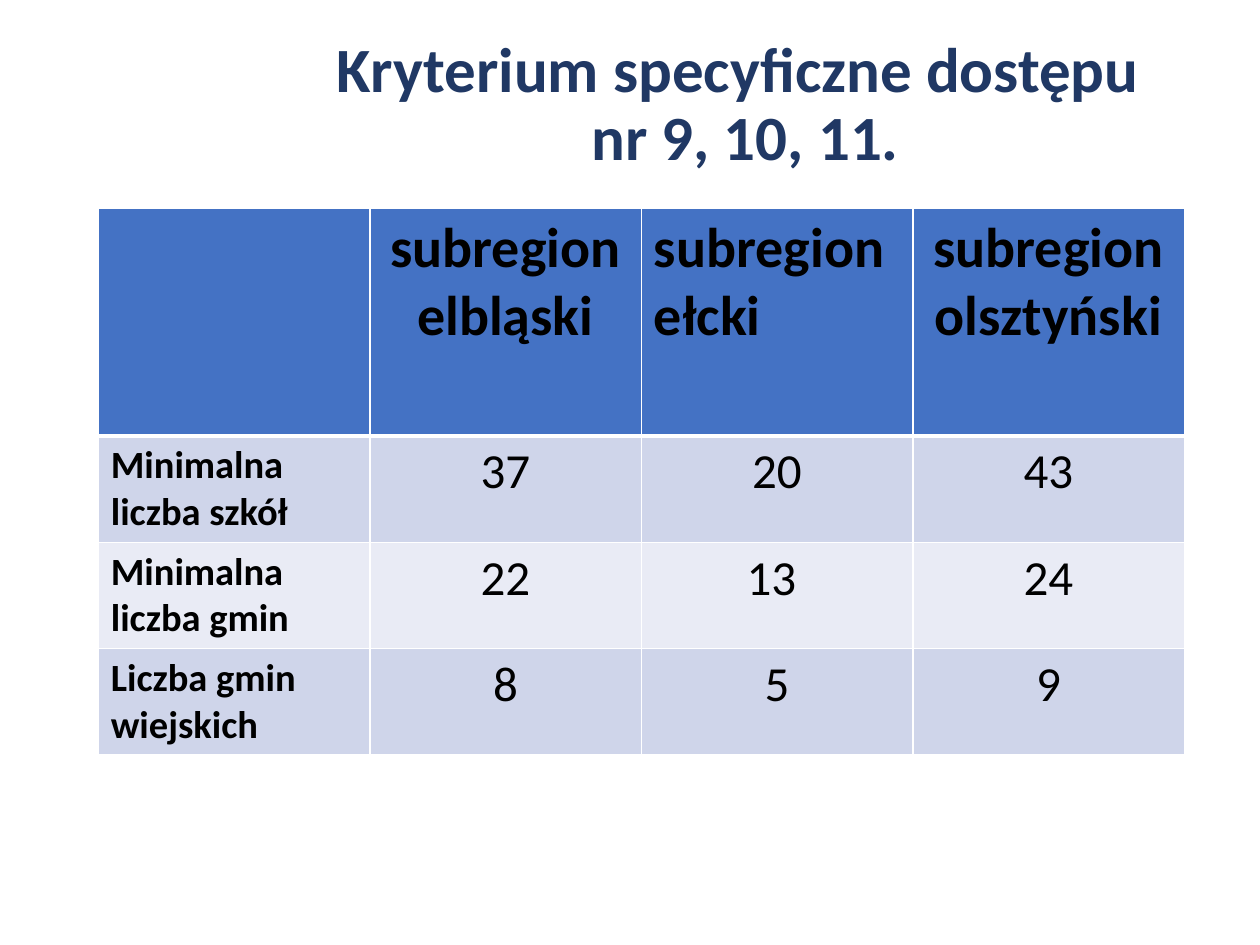
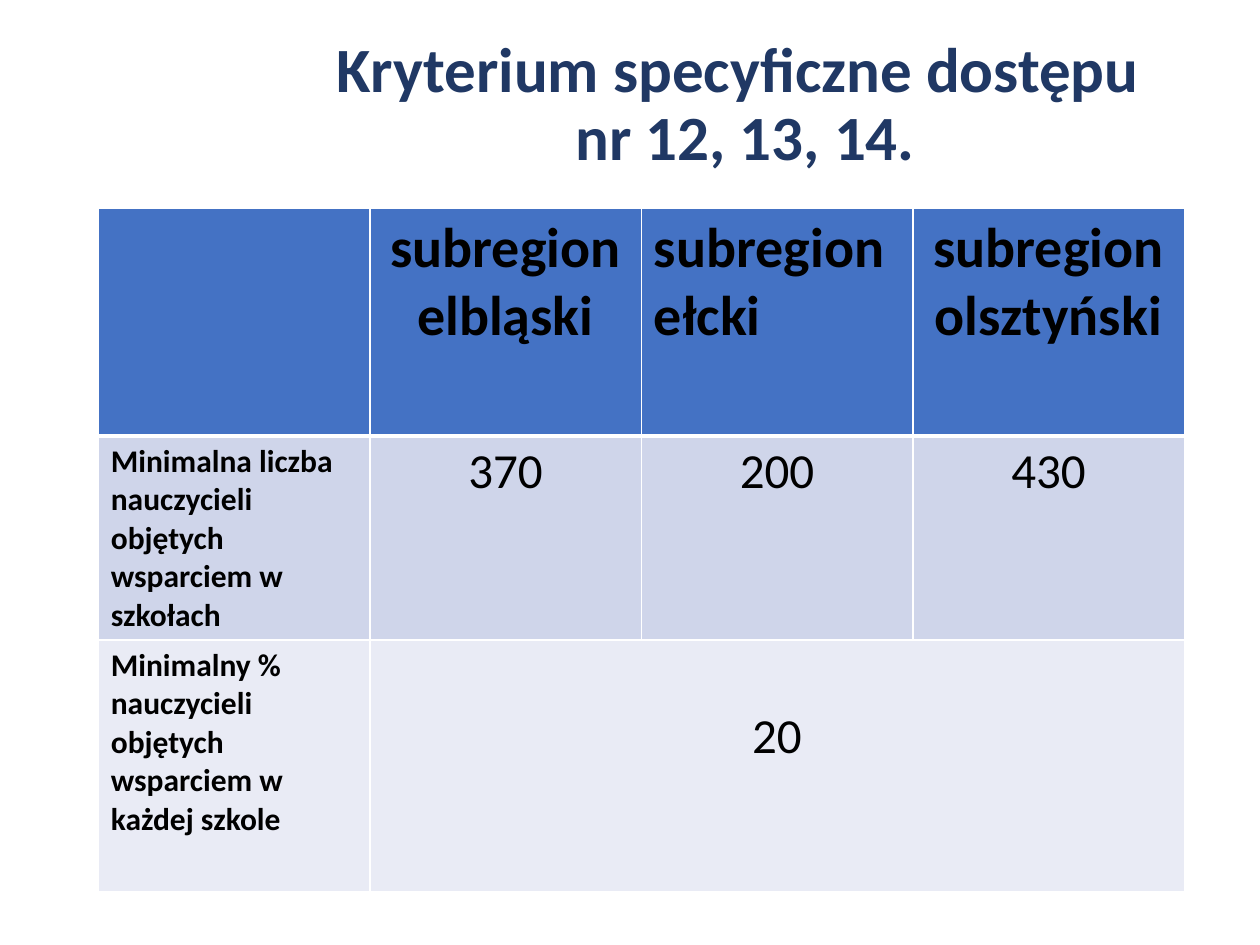
import pptx
import pptx.dml.color
import pptx.enum.text
import pptx.oxml
import pptx.oxml.ns
import pptx.util

Inches, Pt = pptx.util.Inches, pptx.util.Pt
ALIGN = pptx.enum.text.PP_ALIGN

FONT = "Calibri"
NAVY, BLACK, WHITE = "203864", "000000", "FFFFFF"
HEADER_FILL = "4472C4"
BAND_FILLS = ["CFD5EA", "E9EBF5"]

TABLE_LEFT, TABLE_TOP, TABLE_WIDTH = 0.78, 1.65, 8.62
HEADER_HEIGHT = 1.81
REGIONS = ["", "subregion\nelbląski", "subregion ełcki", "subregion\nolsztyński"]

# Each row: label, values (a single value spans all regions)
criteria = [
    {
        "numbers": "nr 9, 10, 11.",
        "label_size": 22,
        "row_heights": [0.84, 0.84, 0.84],
        "rows": [
            ["Minimalna liczba szkół", "37", "20", "43"],
            ["Minimalna liczba gmin", "22", "13 ", "24"],
            ["Liczba gmin wiejskich", "8", "5", "9"],
        ],
    },
    {
        "numbers": "nr 12, 13, 14.",
        "label_size": 18,
        "row_heights": [1.62, 2],
        "rows": [
            ["Minimalna liczba nauczycieli objętych wsparciem w szkołach", "370", "200", "430"],
            ["Minimalny % nauczycieli objętych wsparciem w każdej szkole", "20"],
        ],
    },
]


def color(hex_string):
    return pptx.dml.color.RGBColor.from_string(hex_string)


def write(frame, text, size, hex_string, bold, align):
    frame.text = text
    for paragraph in frame.paragraphs:
        paragraph.alignment = align
        for run in paragraph.runs:
            run.font.name = FONT
            run.font.size = Pt(size)
            run.font.bold = bold
            run.font.color.rgb = color(hex_string)


deck = pptx.Presentation()
deck.slide_width, deck.slide_height = Inches(10), Inches(7.5)
blank = deck.slide_layouts[6]

for criterion in criteria:
    slide = deck.slides.add_slide(blank)

    rows = [REGIONS] + criterion["rows"]
    heights = [HEADER_HEIGHT] + criterion["row_heights"]
    table = slide.shapes.add_table(
        len(rows), len(REGIONS), Inches(TABLE_LEFT), Inches(TABLE_TOP),
        Inches(TABLE_WIDTH), Inches(sum(heights))).table
    table.first_row = table.horz_banding = False
    for column in table.columns:
        column.width = Inches(TABLE_WIDTH / len(REGIONS))

    for r, (values, height) in enumerate(zip(rows, heights)):
        table.rows[r].height = Inches(height)
        for c in range(len(REGIONS)):
            cell = table.cell(r, c)
            # Borders come before the fill in the cell properties
            properties = cell._tc.get_or_add_tcPr()
            for side in "LRTB":
                heavy = (r == 0 and side == "B") or (r == 1 and side == "T")
                properties.append(pptx.oxml.parse_xml(
                    f'<a:ln{side} {pptx.oxml.ns.nsdecls("a")} w="{Pt(3 if heavy else 1)}">'
                    f'<a:solidFill><a:srgbClr val="{WHITE}"/></a:solidFill></a:ln{side}>'))
            cell.fill.solid()
            cell.fill.fore_color.rgb = color(HEADER_FILL if r == 0 else BAND_FILLS[(r - 1) % 2])

        for c, value in enumerate(values):
            is_label = c == 0
            size = 32 if r == 0 else criterion["label_size"] if is_label else 28
            left_aligned = is_label or (r == 0 and c == 2)
            write(table.cell(r, c).text_frame, value, size, BLACK, r == 0 or is_label,
                  ALIGN.LEFT if left_aligned else ALIGN.CENTER)

        if len(values) == 2:
            shared_value = table.cell(r, 1)
            shared_value.merge(table.cell(r, len(REGIONS) - 1))
            shared_value.margin_top = Inches(0.53)

    title = slide.shapes.add_textbox(Inches(2.08), Inches(0.25), Inches(7.67), Inches(1.19)).text_frame
    title.word_wrap = True
    title.vertical_anchor = pptx.enum.text.MSO_ANCHOR.MIDDLE
    write(title, "Kryterium specyficzne dostępu \n" + criterion["numbers"], 36, NAVY, True, ALIGN.CENTER)
    for line in title.paragraphs:
        line.line_spacing = 0.9

deck.save("out.pptx")
